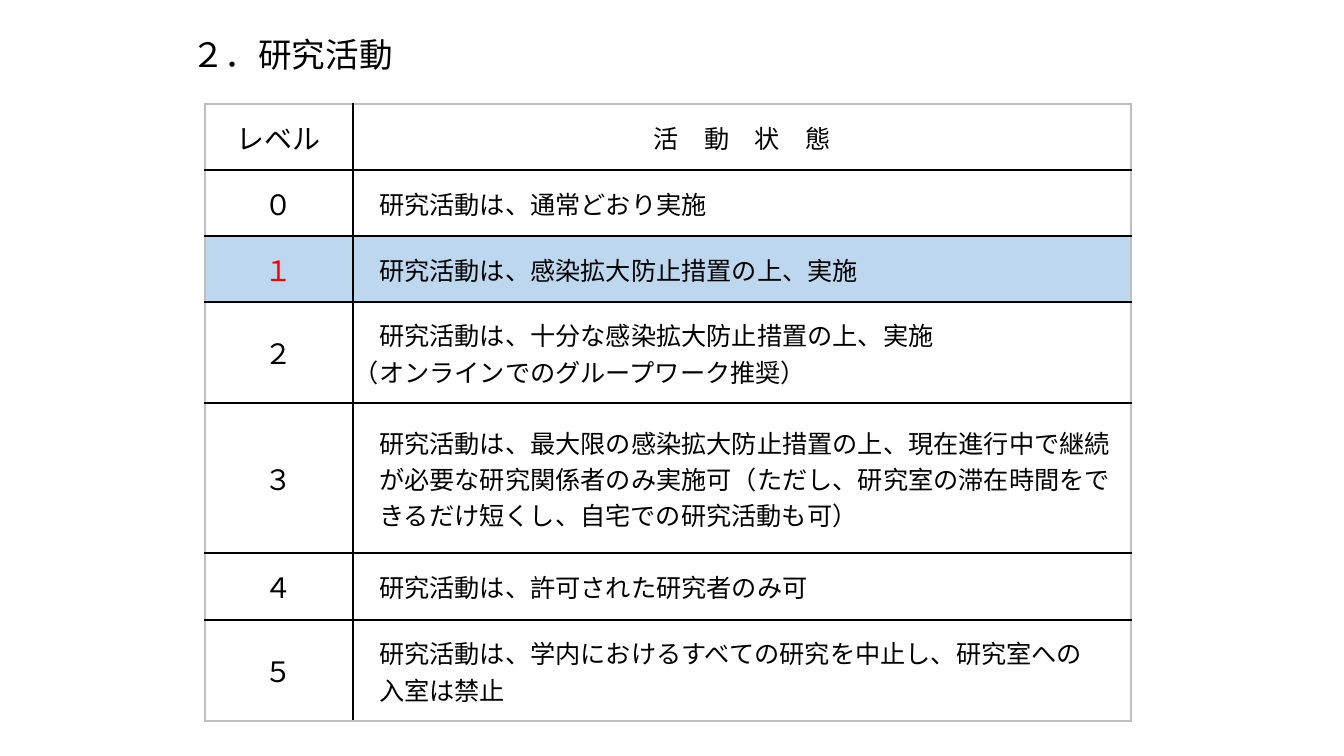
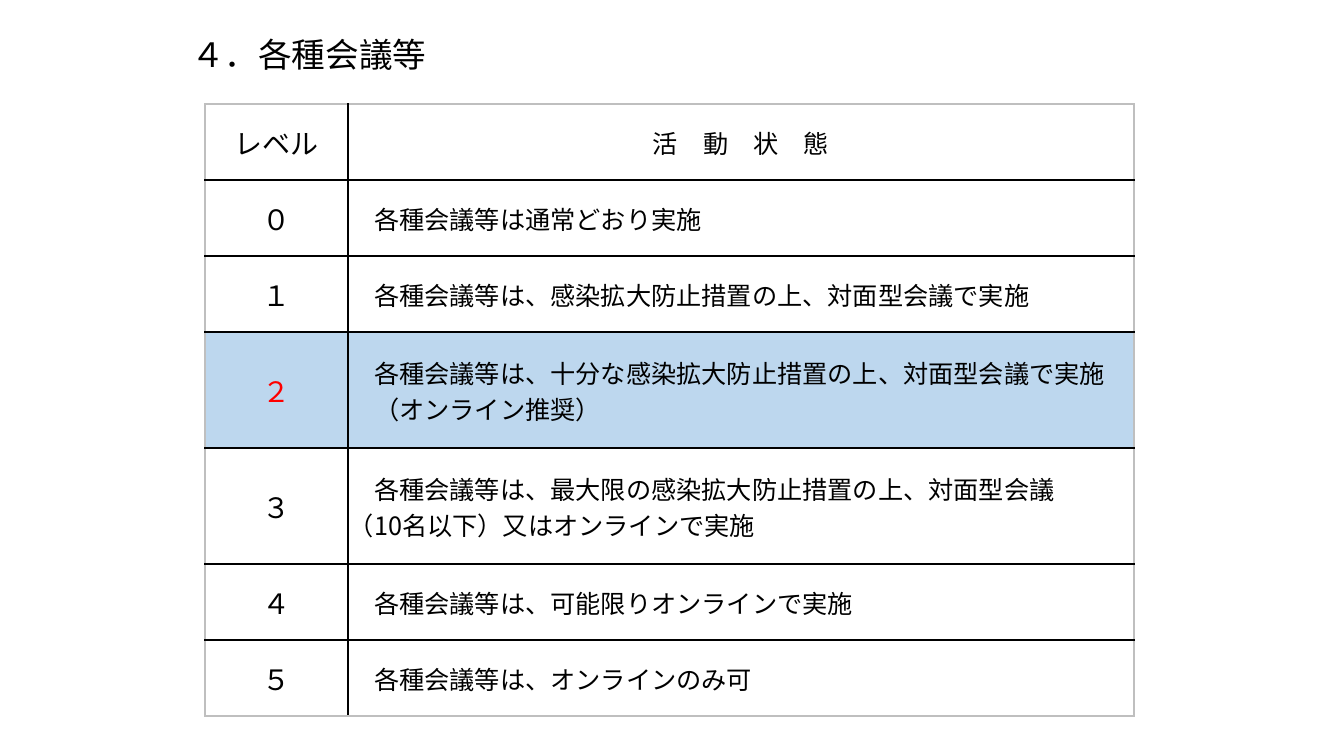
from lxml import etree
from pptx import Presentation
from pptx.dml.color import RGBColor
from pptx.enum.text import MSO_ANCHOR as ANCHOR, MSO_AUTO_SIZE as AUTO, PP_ALIGN as ALIGN
from pptx.oxml.ns import qn
from pptx.util import Emu, Pt

PX = 914400 / 100.8
FONT = "Noto Sans CJK JP"
COLORS = {"text": "000000", "alert": "FF0000", "current": "BDD7EE",
          "grid": "000000", "frame": "BFBFBF"}
HEADINGS = ("レベル", "活　動　状　態")
LEVELS = "０１２３４５"
TITLE_BOX = (181, 29)

SLIDES = [
    {"title": "２．研究活動", "title_size": (294, 50), "current": 1,
     "origin": (205, 104), "cols": (148, 778),
     "rows": (66, 66, 66, 101, 150, 67, 101),
     "states": [
         ["　研究活動は、通常どおり実施"],
         ["　研究活動は、感染拡大防止措置の上、実施"],
         ["　研究活動は、十分な感染拡大防止措置の上、実施",
          "（オンラインでのグループワーク推奨）"],
         ["　研究活動は、最大限の感染拡大防止措置の上、現在進行中で継続",
          "　が必要な研究関係者のみ実施可（ただし、研究室の滞在時間をで",
          "　きるだけ短くし、自宅での研究活動も可）"],
         ["　研究活動は、許可された研究者のみ可"],
         ["　研究活動は、学内におけるすべての研究を中止し、研究室への",
          "　入室は禁止"],
     ]},
    {"title": "４．各種会議等", "title_size": (361, 50), "current": 2,
     "origin": (205, 104), "cols": (143, 786),
     "rows": (76, 76, 76, 116, 116, 76, 76),
     "states": [
         ["　各種会議等は通常どおり実施"],
         ["　各種会議等は、感染拡大防止措置の上、対面型会議で実施"],
         ["　各種会議等は、十分な感染拡大防止措置の上、対面型会議で実施",
          "　（オンライン推奨）"],
         ["　各種会議等は、最大限の感染拡大防止措置の上、対面型会議",
          "（10名以下）又はオンラインで実施"],
         ["　各種会議等は、可能限りオンラインで実施"],
         ["　各種会議等は、オンラインのみ可"],
     ]},
]


def px(n):
    return Emu(round(n * PX))


def write(tf, lines, size=18, color="text", align=ALIGN.LEFT):
    for i, line in enumerate(lines):
        p = tf.add_paragraph() if i else tf.paragraphs[0]
        p.alignment = align
        r = p.add_run()
        r.text = line
        r.font.size = Pt(size)
        r.font.name = FONT
        r.font.color.rgb = RGBColor.from_string(COLORS[color])
        ea = etree.SubElement(r._r.get_or_add_rPr(), qn("a:ea"))
        ea.set("typeface", FONT)


def set_borders(cell, edges):
    tcPr = cell._tc.get_or_add_tcPr()
    for side, color in edges.items():
        ln = etree.SubElement(tcPr, qn("a:ln" + side), w=str(Pt(1)))
        fill = etree.SubElement(ln, qn("a:solidFill"))
        etree.SubElement(fill, qn("a:srgbClr"), val=COLORS[color])


def add_title(s, text, box):
    sp = s.shapes.title
    sp.left, sp.top, sp.width, sp.height = map(px, box)
    tf = sp.text_frame
    tf.word_wrap = False
    tf.auto_size = AUTO.NONE
    tf.vertical_anchor = ANCHOR.TOP
    write(tf, [text], size=24)


def style_cell(cell, row, col, last_row, current):
    cell.vertical_anchor = ANCHOR.MIDDLE
    set_borders(cell, {
        "L": "grid" if col else "frame",
        "R": "frame" if col else "grid",
        "T": "grid" if row else "frame",
        "B": "frame" if row == last_row else "grid",
    })
    if current:
        cell.fill.solid()
        cell.fill.fore_color.rgb = RGBColor.from_string(COLORS["current"])
    else:
        cell.fill.background()
    if row and col:
        cell.margin_left = cell.margin_top = cell.margin_right = px(1)
        cell.margin_bottom = 0


def add_level_table(s, box, cols, rows, states, current):
    table = s.shapes.add_table(len(rows), len(cols), *map(px, box)).table
    table.first_row = table.horz_banding = False
    for column, width in zip(table.columns, cols):
        column.width = px(width)
    for row, height in zip(table.rows, rows):
        row.height = px(height)

    contents = [([HEADINGS[0]], [HEADINGS[1]])]
    contents += [([level], state) for level, state in zip(LEVELS, states)]
    for i, pair in enumerate(contents):
        is_current = i == current + 1
        for j, lines in enumerate(pair):
            cell = table.cell(i, j)
            style_cell(cell, i, j, len(rows) - 1, is_current)
            write(cell.text_frame, lines, size=18 if j else 20,
                  color="alert" if is_current and not j else "text",
                  align=ALIGN.LEFT if i and j else ALIGN.CENTER)


def add_level_slide(prs, data):
    s = prs.slides.add_slide(prs.slide_layouts[5])
    add_title(s, data["title"], TITLE_BOX + data["title_size"])
    cols, rows = data["cols"], data["rows"]
    box = data["origin"] + (sum(cols), sum(rows))
    add_level_table(s, box, cols, rows, data["states"], data["current"])


def main():
    prs = Presentation()
    prs.slide_width, prs.slide_height = px(1344), px(756)
    for data in SLIDES:
        add_level_slide(prs, data)
    prs.save("out.pptx")


if __name__ == "__main__":
    main()
